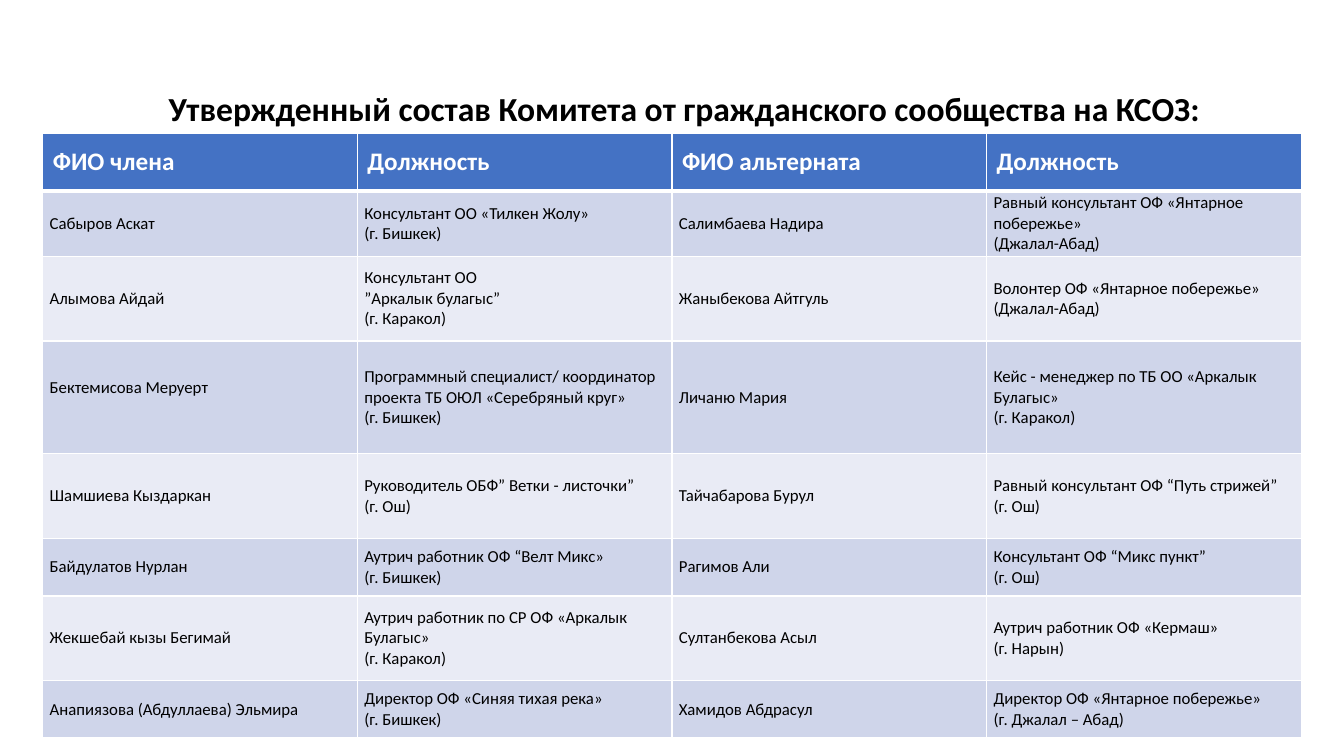
from pptx import Presentation
from pptx.dml.color import RGBColor
from pptx.enum.text import MSO_ANCHOR as Anchor, MSO_AUTO_SIZE as Fit, PP_ALIGN as Align
from pptx.oxml import parse_xml
from pptx.oxml.ns import nsdecls
from pptx.util import Pt

TITLE = "Утвержденный состав Комитета от гражданского сообщества на КСОЗ:"
HEAD = ["ФИО члена", "Должность", "ФИО альтерната", "Должность"]
# Row height, then the four cells
ROWS = [
    (46.8, "Сабыров Аскат", "Консультант ОО «Тилкен Жолу»\n(г. Бишкек)",
     "Салимбаева Надира", "Равный консультант ОФ «Янтарное побережье»\n(Джалал-Абад)"),
    (60.5, "Алымова Айдай", "Консультант ОО\n”Аркалык булагыс”\n(г. Каракол)",
     "Жаныбекова Айтгуль", "Волонтер ОФ «Янтарное побережье»\n(Джалал-Абад)"),
    (80.6, "Бектемисова Меруерт",
     "Программный специалист/ координатор\nпроекта ТБ ОЮЛ «Серебряный круг»\n(г. Бишкек)",
     "Личаню Мария", "Кейс - менеджер по ТБ ОО «Аркалык Булагыс»\n(г. Каракол)"),
    (60.5, "Шамшиева Кыздаркан", "Руководитель ОБФ” Ветки - листочки”\n(г. Ош)",
     "Тайчабарова Бурул", "Равный консультант ОФ “Путь стрижей”\n(г. Ош)"),
    (41, "Байдулатов Нурлан", "Аутрич работник ОФ “Велт Микс»\n(г. Бишкек)",
     "Рагимов Али", "Консультант ОФ “Микс пункт”\n(г. Ош)"),
    (60.5, "Жекшебай кызы Бегимай", "Аутрич работник по СР ОФ «Аркалык Булагыс»\n(г. Каракол)",
     "Султанбекова Асыл", "Аутрич работник ОФ «Кермаш»\n(г. Нарын)"),
    (41, "Анапиязова (Абдуллаева) Эльмира", "Директор ОФ «Синяя тихая река»\n(г. Бишкек)",
     "Хамидов Абдрасул", "Директор ОФ «Янтарное побережье»\n(г. Джалал – Абад)"),
]
HEAD_H = 41


def color(code):
    return RGBColor.from_string(code)


def write(frame, text, size=12, ink="000000", bold=False, align=Align.LEFT):
    frame.word_wrap = True
    for i, line in enumerate(text.split("\n")):
        para = frame.add_paragraph() if i else frame.paragraphs[0]
        para.alignment = align
        run = para.add_run()
        run.text = line
        font = run.font
        font.name, font.size, font.bold = "Calibri", Pt(size), bold
        font.color.rgb = color(ink)


def edge(cell, top=1, bottom=1):
    props = cell._tc.get_or_add_tcPr()
    for side, width in (("L", 1), ("R", 1), ("T", top), ("B", bottom)):
        props.append(parse_xml(
            f'<a:ln{side} {nsdecls("a")} w="{Pt(width)}"><a:solidFill>'
            f'<a:srgbClr val="FFFFFF"/></a:solidFill></a:ln{side}>'))


def paint(cell, code):
    cell.fill.solid()
    cell.fill.fore_color.rgb = color(code)
    cell.vertical_anchor = Anchor.MIDDLE


def title(slide, x, y, w, h):
    frame = slide.shapes.add_textbox(Pt(x), Pt(y), Pt(w), Pt(h)).text_frame
    write(frame, TITLE, size=24, bold=True, align=Align.CENTER)
    frame.auto_size = Fit.SHAPE_TO_FIT_TEXT


def roster(slide, x, y, w):
    high = HEAD_H + sum(row[0] for row in ROWS)
    grid = slide.shapes.add_table(len(ROWS) + 1, len(HEAD), Pt(x), Pt(y), Pt(w), Pt(high)).table
    for col in grid.columns:
        col.width = Pt(w / len(HEAD))

    # Header
    grid.rows[0].height = Pt(HEAD_H)
    for c, text in enumerate(HEAD):
        cell = grid.cell(0, c)
        edge(cell, bottom=3)
        paint(cell, "4472C4")
        write(cell.text_frame, text, size=18, ink="FFFFFF", bold=True)

    # Members and alternates
    for r, (height, *texts) in enumerate(ROWS, 1):
        grid.rows[r].height = Pt(height)
        for c, text in enumerate(texts):
            cell = grid.cell(r, c)
            edge(cell, top=3 if r == 1 else 1)
            paint(cell, "CFD5EA" if r % 2 else "E9EBF5")
            cell.margin_left = cell.margin_right = Pt(5)
            cell.margin_top = cell.margin_bottom = Pt(0)
            write(cell.text_frame, text)

    # This name sits a little above the middle of its row
    grid.cell(3, 0).margin_bottom = Pt(14)


def main():
    deck = Presentation()
    deck.slide_width, deck.slide_height = Pt(960), Pt(540)
    slide = deck.slides.add_slide(deck.slide_layouts[6])
    roster(slide, 30.5, 95.3, 899)
    title(slide, 113, 59, 751.7, 36.3)
    deck.save("out.pptx")


if __name__ == "__main__":
    main()
